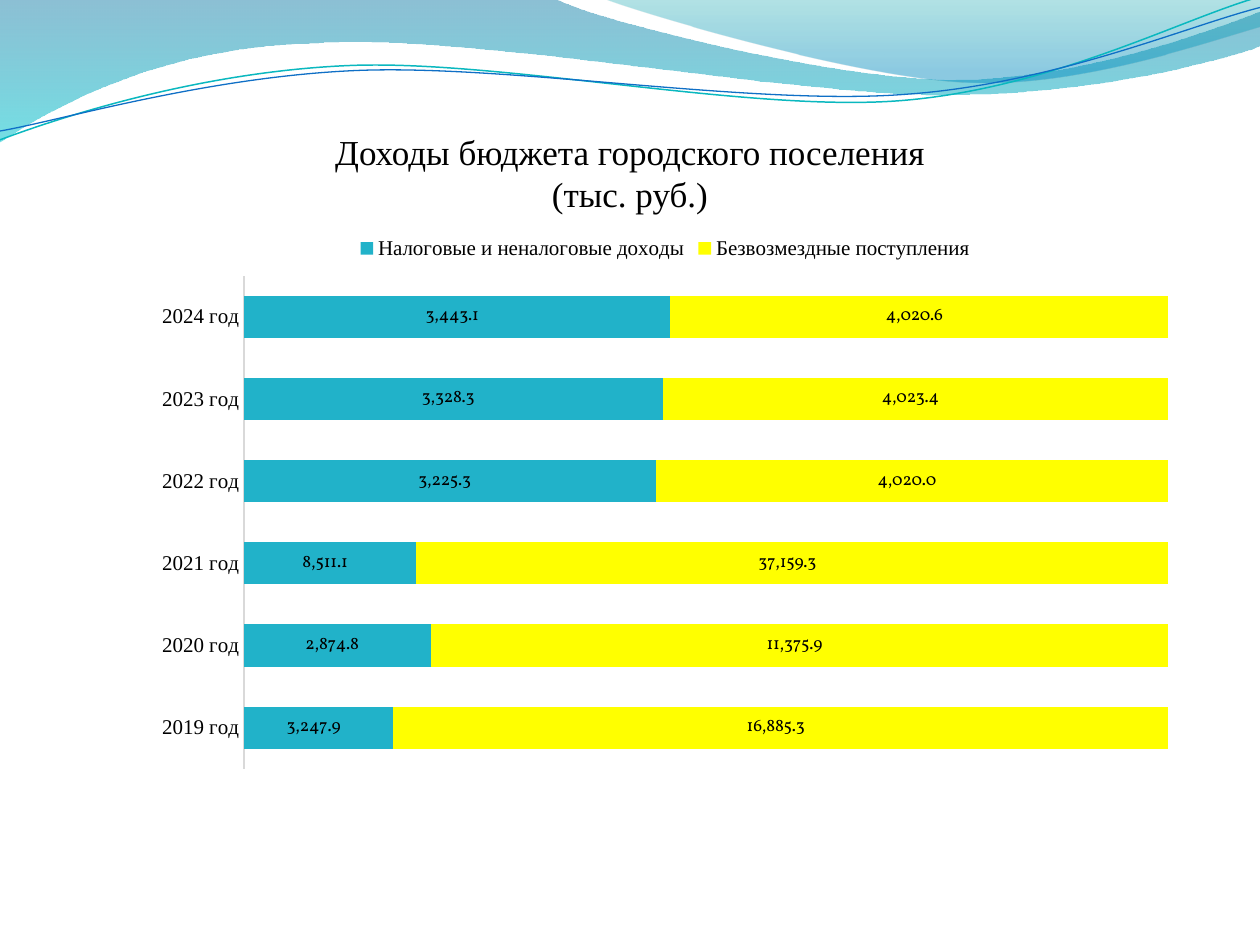
from dataclasses import dataclass
from math import cos, radians, sin
from typing import Optional

from pptx import Presentation
from pptx import util as u
from pptx.chart.data import CategoryChartData
from pptx.dml.color import RGBColor
from pptx.enum import chart as ch, text
from pptx.oxml.ns import qn
from lxml import etree

BLACK = RGBColor(0x00, 0x00, 0x00)
WHITE = RGBColor(0xFF, 0xFF, 0xFF)
AXIS_GREY = RGBColor(0xD9, 0xD9, 0xD9)
TAX_TEAL = RGBColor(0x21, 0xB2, 0xC9)
GRANT_YELLOW = RGBColor(0xFF, 0xFF, 0x00)
LINE_TEAL = RGBColor(0x0A, 0xB8, 0xBF)
LINE_BLUE = RGBColor(0x0F, 0x6F, 0xC6)
WAVE_BLUE = RGBColor(0x00, 0x74, 0xA1)
WAVE_CYAN = RGBColor(0x00, 0xC6, 0xCF)
CREST_TEAL = RGBColor(0x00, 0xA1, 0xA9)
CREST_BLUE = RGBColor(0x00, 0x8B, 0xBF)

SERIF = "Times New Roman"
LABEL_FONT = "Vollkorn"
VALUE_FORMAT = r"#,##0.0\ _₽;\-#,##0.0\ _₽"
LINE_TILT = 2.7


@dataclass
class Stop:
    position: float
    color: RGBColor
    opacity: int


@dataclass
class Wave:
    """Outline in inches: a segment of 1 point is a line, of 3 a Bezier."""
    start: tuple
    segments: list
    stops: Optional[list] = None
    line_color: Optional[RGBColor] = None
    line_width: float = 0
    center: tuple = (0, 0)
    tilt: float = 0


@dataclass
class Income:
    name: str
    values: list
    color: RGBColor


WAVES = [
    Wave((0, 0),
         [[(4.4, -0.01)],
          [(4.76, 0.17), (6.64, 0.63), (7.58, 0.63)],
          [(8.53, 0.63), (9.58, 0.26), (10, 0.09)],
          [(10.01, 0.36)],
          [(9.83, 0.44), (8.7, 0.76), (7.46, 0.75)],
          [(6.22, 0.75), (3.82, 0.28), (2.57, 0.34)],
          [(1.29, 0.36), (0.46, 0.83), (-0.01, 1.13)],
          [(0, 0)]],
         stops=[Stop(0, WAVE_BLUE, 45), Stop(1, WAVE_CYAN, 55)]),
    Wave((4.79, -0.01),
         [[(5.09, 0.11), (6.82, 0.62), (7.69, 0.65)],
          [(8.56, 0.69), (9.61, 0.32), (10, 0.21)],
          [(10, 0)],
          [(4.79, -0.01)]],
         stops=[Stop(0, CREST_TEAL, 30), Stop(0.8, CREST_BLUE, 45)]),
    Wave((0, 1.11),
         [[(0.48, 0.93), (1.58, 0.57), (2.77, 0.52)],
          [(3.95, 0.47), (5.93, 0.89), (7.13, 0.8)],
          [(8.33, 0.71), (9.38, 0.15), (9.98, -0.02)]],
         line_color=LINE_TEAL, line_width=0.85,
         center=(4.99, 0.57), tilt=LINE_TILT),
    Wave((0, 1.04),
         [[(0.47, 0.96), (1.64, 0.61), (2.83, 0.56)],
          [(4.03, 0.51), (5.97, 0.84), (7.17, 0.75)],
          [(8.36, 0.67), (9.41, 0.21), (10, 0.06)]],
         line_color=LINE_BLUE, line_width=0.75,
         center=(5, 0.59), tilt=LINE_TILT),
]

TITLE_LINES = ["Доходы бюджета городского поселения", "(тыс. руб.)"]
YEARS = [f"{year} год" for year in range(2019, 2025)]
INCOMES = [
    Income("Налоговые и неналоговые доходы",
           [3247.9, 2874.8, 8511.1, 3225.3, 3328.3, 3443.1], TAX_TEAL),
    Income("Безвозмездные поступления",
           [16885.3, 11375.9, 37159.3, 4020, 4023.4, 4020.6], GRANT_YELLOW),
]


def level_point(wave: Wave, point: tuple) -> tuple:
    """Undo the tilt that the shape's rotation puts back; give EMU."""
    angle = radians(wave.tilt)
    (cx, cy), (x, y) = wave.center, point
    dx, dy = x - cx, y - cy
    return (u.Inches(cx + dx * cos(angle) - dy * sin(angle)),
            u.Inches(cy + dx * sin(angle) + dy * cos(angle)))


def bend_segments(outline, wave: Wave) -> None:
    """Join each three straight steps of a Bezier into one curve."""
    steps = iter(list(outline.element.iter(qn("a:lnTo"))))
    for segment in wave.segments:
        first, *others = [next(steps) for _ in segment]
        if others:
            first.addprevious(curve := etree.Element(qn("a:cubicBezTo")))
            for step in (first, *others):
                curve.append(step[0])
                step.getparent().remove(step)


def draw_wave(slide, wave: Wave) -> None:
    builder = slide.shapes.build_freeform(*level_point(wave, wave.start))
    builder.add_line_segments(
        [level_point(wave, point) for segment in wave.segments for point in segment],
        close=wave.stops is not None)
    outline = builder.convert_to_shape()
    bend_segments(outline, wave)
    outline.rotation = -wave.tilt % 360
    outline.shadow.inherit = False
    if wave.stops is None:
        outline.fill.background()
        outline.line.color.rgb = wave.line_color
        outline.line.width = u.Pt(wave.line_width)
        return
    outline.line.fill.background()
    outline.fill.gradient()
    outline.fill.gradient_angle = 270
    for target, stop in zip(outline.fill.gradient_stops, wave.stops):
        target.position = stop.position
        target.color.rgb = stop.color
    colors = outline.element.spPr.iter(qn("a:srgbClr"))
    for color, stop in zip(colors, wave.stops):
        etree.SubElement(color, qn("a:alpha"), val=str(stop.opacity * 1000))


def style_font(font, size: float, name: str) -> None:
    font.size = u.Pt(size)
    font.name = name
    font.bold = False
    font.color.rgb = BLACK


def draw_title(slide) -> None:
    title = slide.shapes.add_textbox(u.Inches(0.5), u.Inches(1.17),
                                     u.Inches(9), u.Inches(0.53))
    title.fill.solid()
    title.fill.fore_color.rgb = WHITE
    title.line.color.rgb = WHITE
    title.line.width = u.Pt(0.75)
    frame = title.text_frame
    frame.word_wrap = True
    frame.vertical_anchor = text.MSO_ANCHOR.BOTTOM
    frame.margin_left = frame.margin_right = frame.margin_bottom = 0
    frame.margin_top = u.Inches(0.05)
    paragraph = frame.paragraphs[0]
    paragraph.alignment = text.PP_ALIGN.CENTER
    for index, line in enumerate(TITLE_LINES):
        if index:
            paragraph.add_line_break()
        run = paragraph.add_run()
        run.text = line
        style_font(run.font, 20, SERIF)


def draw_income_chart(slide) -> None:
    data = CategoryChartData(number_format=VALUE_FORMAT)
    data.categories = YEARS
    for income in INCOMES:
        data.add_series(income.name, income.values)
    chart = slide.shapes.add_chart(
        ch.XL_CHART_TYPE.BAR_STACKED_100, u.Inches(1.12), u.Inches(1.77),
        u.Inches(8.32), u.Inches(4.42), data).chart
    chart.has_title = False
    style_font(chart.font, 10, LABEL_FONT)

    # Legend
    chart.has_legend = True
    chart.legend.position = ch.XL_LEGEND_POSITION.TOP
    chart.legend.include_in_layout = False
    style_font(chart.legend.font, 12, SERIF)

    # Axes
    years = chart.category_axis
    years.major_tick_mark = years.minor_tick_mark = ch.XL_TICK_MARK.NONE
    years.format.line.color.rgb = AXIS_GREY
    years.format.line.width = u.Pt(0.75)
    style_font(years.tick_labels.font, 12, SERIF)
    chart.value_axis.has_major_gridlines = False
    chart.value_axis.visible = False

    # Bars and their values
    plot = chart.plots[0]
    plot.gap_width, plot.overlap = 95, 100
    plot.vary_by_categories = False
    for series, income in zip(plot.series, INCOMES):
        series.format.fill.solid()
        series.format.fill.fore_color.rgb = income.color
        labels = series.data_labels
        labels.show_value = True
        labels.number_format = VALUE_FORMAT
        labels.number_format_is_linked = False
        style_font(labels.font, 10, LABEL_FONT)


# Slide
deck = Presentation()
deck.slide_width, deck.slide_height = u.Inches(10), u.Inches(7.5)
revenue_slide = deck.slides.add_slide(deck.slide_layouts[6])
for ribbon in WAVES:
    draw_wave(revenue_slide, ribbon)
draw_title(revenue_slide)
draw_income_chart(revenue_slide)
deck.save("out.pptx")
